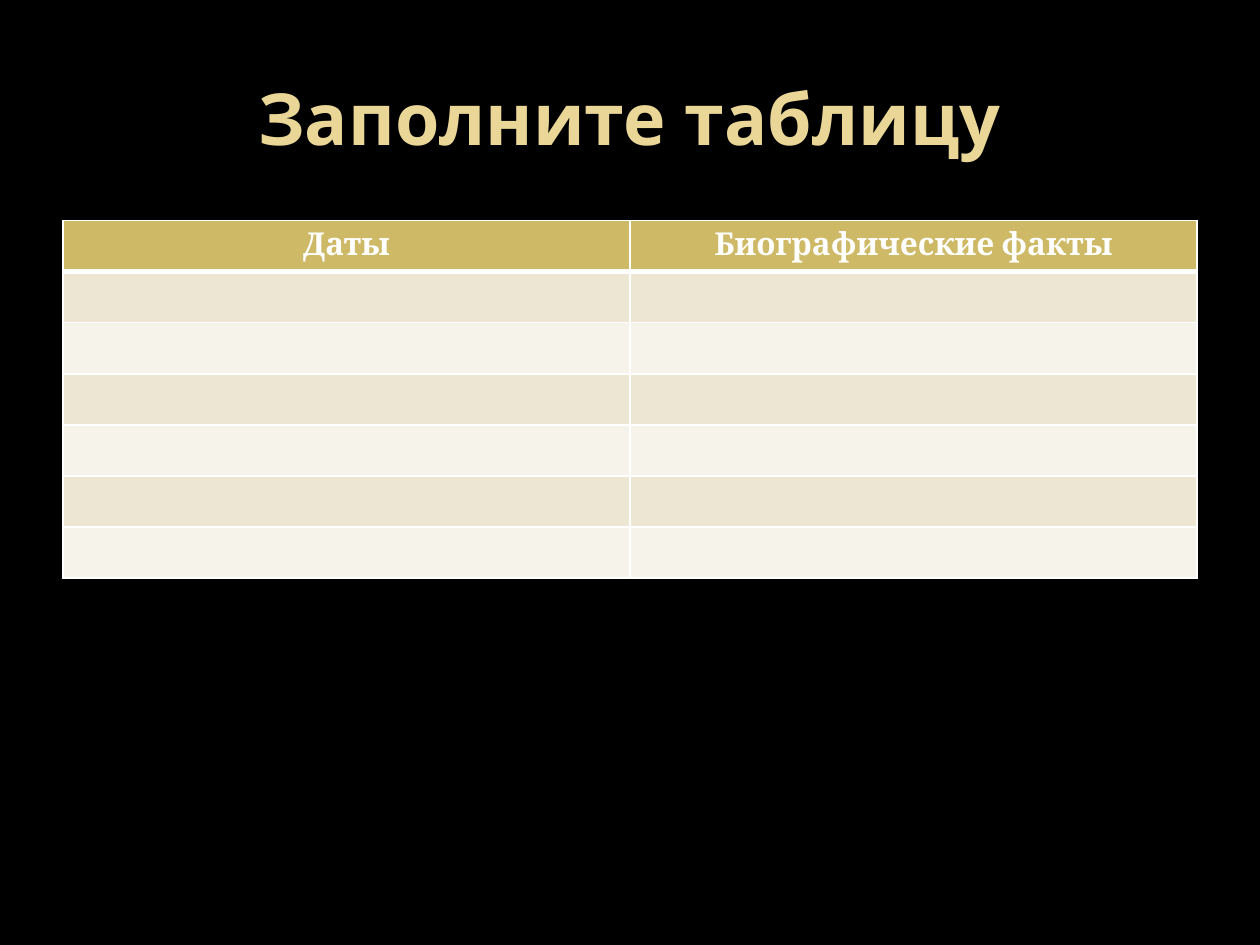
from lxml import etree
from pptx import Presentation
from pptx import util as u
from pptx.dml.color import RGBColor
from pptx.enum import text
from pptx.oxml.ns import qn

HUES = {
    "back": "000000",
    "title": "EAD696",
    "head": "CEB966",
    "odd": "EDE6D3",
    "even": "F6F3EA",
    "white": "FFFFFF",
}
HEADS = ["Даты", "Биографические факты"]
ROWS = 7


def hue(name):
    return RGBColor.from_string(HUES[name])


def write(frame, words, size, font, color):
    """Put one centred bold line into a text frame."""
    para = frame.paragraphs[0]
    para.alignment = text.PP_ALIGN.CENTER
    run = para.add_run()
    run.text = words
    run.font.size = u.Pt(size)
    run.font.name = font
    run.font.bold = True
    run.font.color.rgb = hue(color)


def edge(cell, base):
    """Draw white borders; base is the width of the bottom one."""
    props = cell._tc.get_or_add_tcPr()
    sides = {"lnL": 1, "lnR": 1, "lnT": 1, "lnB": base}
    for spot, (side, width) in enumerate(sides.items()):
        line = etree.Element(qn("a:" + side), w=str(u.Pt(width)))
        fill = etree.SubElement(line, qn("a:solidFill"))
        etree.SubElement(fill, qn("a:srgbClr"), val=HUES["white"])
        props.insert(spot, line)


def add_title(slide, left, top, width, height):
    frame = slide.shapes.add_textbox(left, top, width, height).text_frame
    frame.word_wrap = True
    frame.vertical_anchor = text.MSO_ANCHOR.MIDDLE
    write(frame, "Заполните таблицу", size=41, font="Open Sans", color="title")


def add_grid(slide, left, top, width, height):
    grid = slide.shapes.add_table(
        ROWS, len(HEADS), left, top, width, height).table
    for r, row in enumerate(grid.rows):
        for c, cell in enumerate(row.cells):
            tone = "head" if r == 0 else "odd" if r % 2 else "even"
            cell.fill.solid()
            cell.fill.fore_color.rgb = hue(tone)
            edge(cell, base=3 if r == 0 else 1)
            if r == 0:
                write(cell.text_frame, HEADS[c], size=18, font="Cambria",
                      color="white")
            else:
                # Blank cells keep the text size for later entries
                cell.text_frame.paragraphs[0].font.size = u.Pt(18)


def main():
    deck = Presentation()
    deck.slide_width, deck.slide_height = u.Inches(10), u.Inches(7.5)
    slide = deck.slides.add_slide(deck.slide_layouts[6])

    # Background
    slide.background.fill.solid()
    slide.background.fill.fore_color.rgb = hue("back")

    # Title above the table
    left, width = u.Inches(0.5), u.Inches(9)
    add_title(slide, left, u.Inches(0.3), width, u.Inches(1.25))
    add_grid(slide, left, u.Inches(1.75), width, u.Inches(2.84))

    deck.save("out.pptx")


if __name__ == "__main__":
    main()
